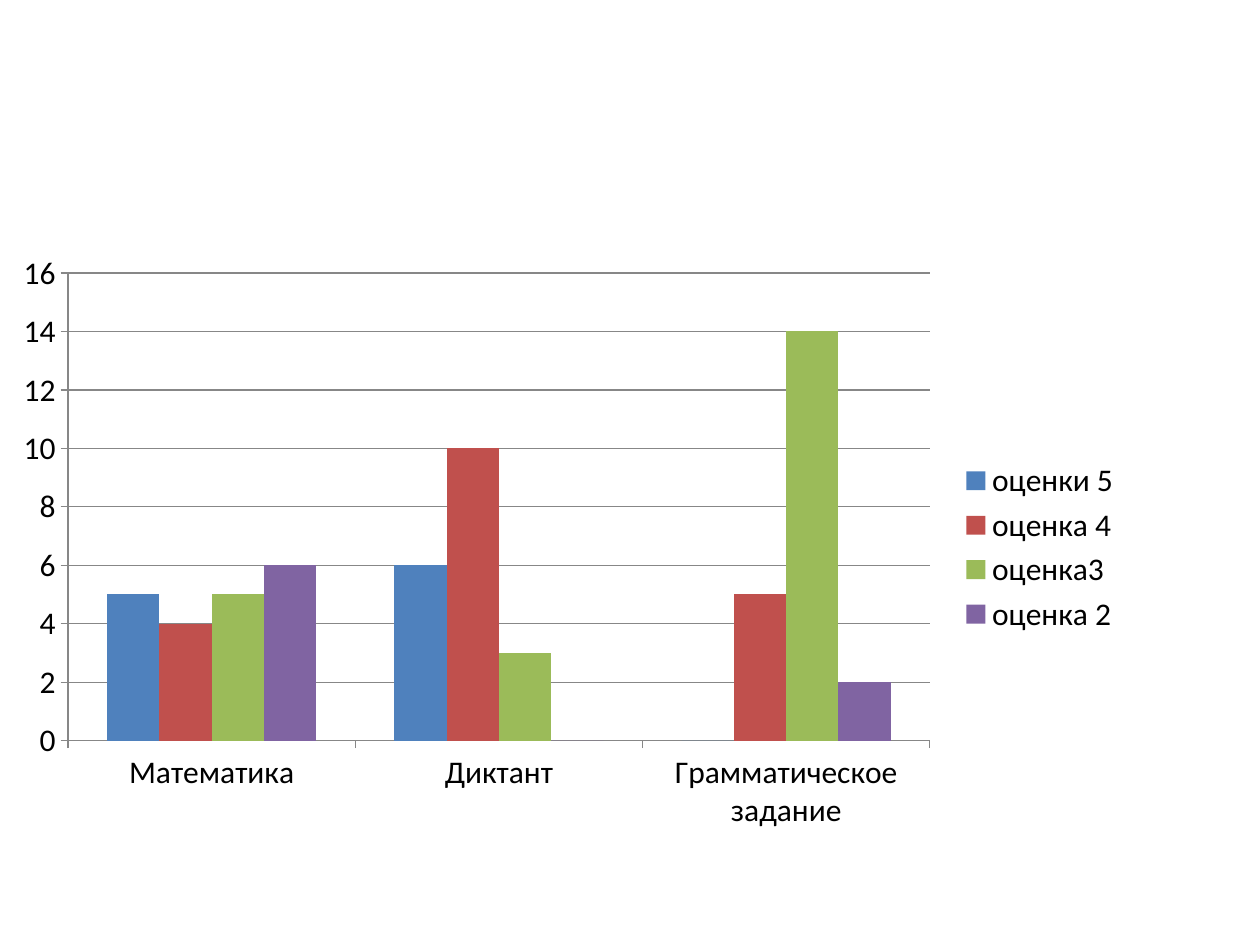
"""Build a slide with a column chart of marks by subject."""
import pptx
import pptx.chart.data
import pptx.dml.color
import pptx.enum.chart
import pptx.oxml
import pptx.util

Pt = pptx.util.Pt
RGBColor = pptx.dml.color.RGBColor
BLACK = RGBColor(0x00, 0x00, 0x00)
GRAY = RGBColor(0x87, 0x87, 0x87)
BLUE = RGBColor(0x4F, 0x81, 0xBD)
RED = RGBColor(0xC0, 0x50, 0x4D)
GREEN = RGBColor(0x9B, 0xBB, 0x59)
PURPLE = RGBColor(0x80, 0x64, 0xA2)

marks = [
    ("оценки 5", (5, 6, 0), BLUE),
    ("оценка 4", (4, 10, 5), RED),
    ("оценка3", (5, 3, 14), GREEN),
    ("оценка 2", (6, 0, 2), PURPLE),
]

deck = pptx.Presentation()
deck.slide_width, deck.slide_height = Pt(720), Pt(540)
slide = deck.slides.add_slide(deck.slide_layouts[6])

data = pptx.chart.data.CategoryChartData(number_format="General")
data.categories = ["Математика", "Диктант", "Грамматическое задание"]
for name, counts, color in marks:
    data.add_series(name, counts)

kind = pptx.enum.chart.XL_CHART_TYPE.COLUMN_CLUSTERED
chart = slide.shapes.add_chart(kind, Pt(0), Pt(134.64), Pt(648), Pt(356.4), data).chart
chart.has_title = False
chart.font.name = "Calibri"
chart.font.size = Pt(18)
chart.font.color.rgb = BLACK

chart.has_legend = True
chart.legend.position = pptx.enum.chart.XL_LEGEND_POSITION.RIGHT
chart.legend.include_in_layout = False

plot = chart.plots[0]
plot.gap_width = 150
plot.overlap = 0
plot.vary_by_categories = False
for series, (name, counts, color) in zip(plot.series, marks):
    series.format.fill.solid()
    series.format.fill.fore_color.rgb = color
    series.invert_if_negative = False

ticks = pptx.enum.chart.XL_TICK_MARK
for axis in (chart.category_axis, chart.value_axis):
    axis.major_tick_mark = ticks.OUTSIDE
    axis.minor_tick_mark = ticks.NONE
    axis.format.line.color.rgb = GRAY
    axis.format.line.width = Pt(0.75)

scale = chart.value_axis
scale.minimum_scale, scale.maximum_scale, scale.major_unit = 0, 16, 2
scale.has_major_gridlines = True
scale.major_gridlines.format.line.color.rgb = GRAY
scale.major_gridlines.format.line.width = Pt(0.75)

area = chart.element.chart.plotArea
for old in area.findall(pptx.oxml.ns.qn("c:layout")):
    area.remove(old)
frame = [("layoutTarget", "inner"), ("xMode", "edge"), ("yMode", "edge"),
         ("x", 0.06), ("y", 0.06), ("w", 0.76), ("h", 0.75)]
parts = "".join(f'<c:{tag} val="{value}"/>' for tag, value in frame)
names = pptx.oxml.ns.nsdecls("c")
area.insert(0, pptx.oxml.parse_xml(
    f"<c:layout {names}><c:manualLayout>{parts}</c:manualLayout></c:layout>"))

deck.save("out.pptx")
